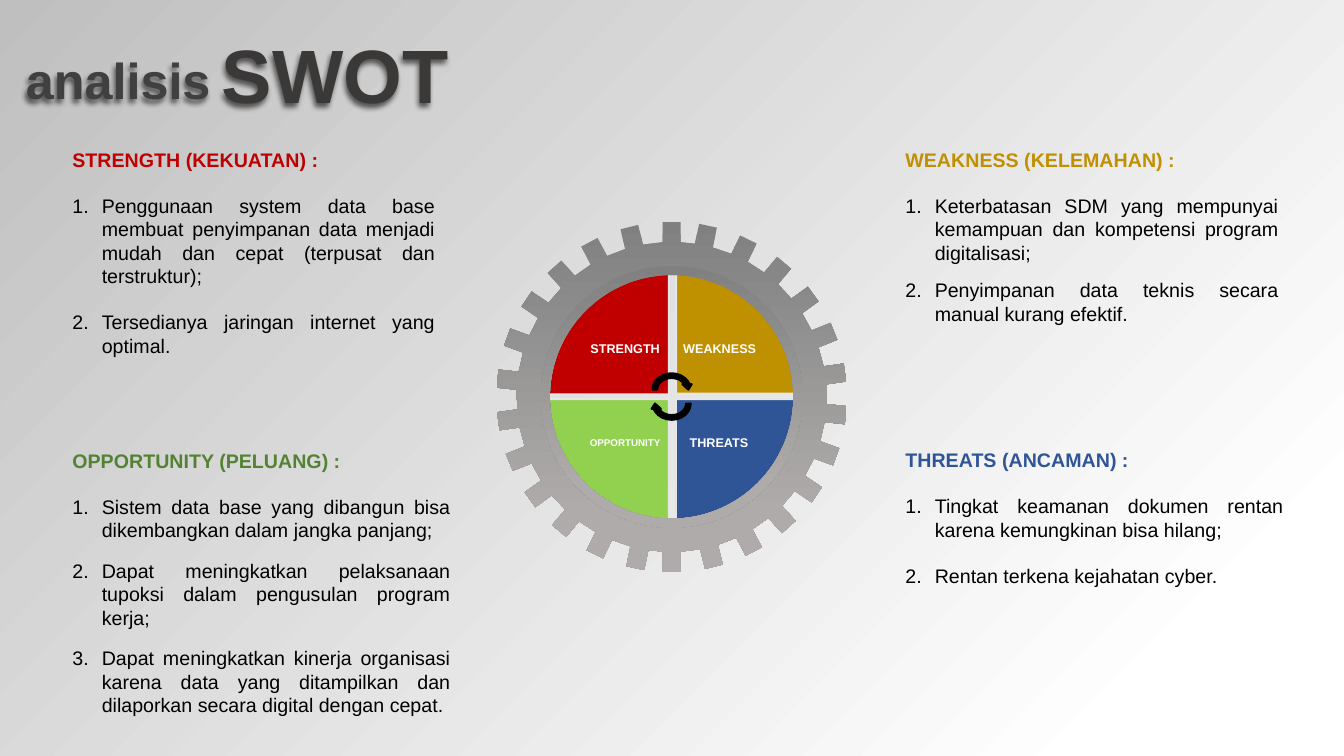
from math import cos, sin, radians

from lxml.etree import SubElement
from pptx import Presentation
from pptx.dml.color import RGBColor
from pptx.enum.shapes import MSO_SHAPE
from pptx.enum.text import MSO_ANCHOR, MSO_AUTO_SIZE, PP_ALIGN
from pptx.oxml.ns import qn
from pptx.util import Pt

RED = RGBColor(0xC0, 0x00, 0x00)
GOLD = RGBColor(0xBF, 0x90, 0x00)
BLUE = RGBColor(0x2F, 0x55, 0x97)
LIME = RGBColor(0x92, 0xD0, 0x50)
GREEN = RGBColor(0x54, 0x82, 0x35)
BLACK = RGBColor(0x00, 0x00, 0x00)
WHITE = RGBColor(0xFF, 0xFF, 0xFF)
CHARCOAL = RGBColor(0x3B, 0x38, 0x38)
DARK_GRAY = RGBColor(0x40, 0x40, 0x40)
MID_GRAY = RGBColor(0x80, 0x80, 0x80)
WARM_GRAY = RGBColor(0xAF, 0xAB, 0xAB)
LIGHT_GRAY = RGBColor(0xBF, 0xBF, 0xBF)
EDGE_GRAY = RGBColor(0xE7, 0xE6, 0xE6)


def set_gradient(fill, start, end, end_position, angle):
    fill.gradient()
    fill.gradient_angle = angle
    first, last = fill.gradient_stops
    first.color.rgb, first.position = start, 0
    last.color.rgb, last.position = end, end_position


def style_paragraph(paragraph, size, color, align, bold=True):
    paragraph.alignment = align
    for run in paragraph.runs:
        run.font.name = "Arial"
        run.font.size = Pt(size)
        run.font.bold = bold
        run.font.color.rgb = color


prs = Presentation()
prs.slide_width, prs.slide_height = Pt(960), Pt(540)
slide = prs.slides.add_slide(prs.slide_layouts.get_by_name("Comparison"))
shapes = slide.shapes
set_gradient(slide.background.fill, LIGHT_GRAY, WHITE, 0.88, 315)

# Title in two sizes, both with a soft shadow
swot = shapes.title
analisis = shapes.add_textbox(0, 0, 0, 0)
for title, text, left, top, height, size, color in [
    (swot, "SWOT", 124.5, 16.5, 72.5, 54, CHARCOAL),
    (analisis, "analisis", -30.5, 31.5, 51, 36, DARK_GRAY),
]:
    title.left, title.top = Pt(left), Pt(top)
    title.width, title.height = Pt(230), Pt(height)
    frame = title.text_frame
    frame.text = text
    frame.word_wrap = True
    frame.auto_size = MSO_AUTO_SIZE.NONE
    frame.vertical_anchor = MSO_ANCHOR.TOP
    style_paragraph(frame.paragraphs[0], size, color, PP_ALIGN.CENTER)
    effects = SubElement(title.element.spPr, qn("a:effectLst"))
    shadow = SubElement(effects, qn("a:outerShdw"), blurRad=str(Pt(4)),
                        dist=str(Pt(3)), dir="7200000")
    shadow_color = SubElement(shadow, qn("a:srgbClr"), val="000000")
    SubElement(shadow_color, qn("a:alpha"), val="60000")

# Four numbered lists: placeholder, left, top, width, height, item gap
# (a no-break space keeps two words on one line where the list needs it)
factors = [
    (1, 44.5, 102, 273.5, 158, 16, "STRENGTH (KEKUATAN) :", RED, [
        "Penggunaan system data base membuat penyimpanan data menjadi "
        "mudah dan cepat (terpusat dan terstruktur);",
        "Tersedianya jaringan internet yang optimal."]),
    (2, 44.5, 317, 284.5, 225, 12, "OPPORTUNITY (PELUANG) :", GREEN, [
        "Sistem data base yang dibangun bisa dikembangkan dalam jangka "
        "panjang;",
        "Dapat meningkatkan pelaksanaan tupoksi dalam pengusulan program "
        "kerja;",
        "Dapat meningkatkan kinerja organisasi karena data yang "
        "ditampilkan dan dilaporkan secara digital dengan cepat."]),
    (3, 639.5, 102, 281, 135, 10, "WEAKNESS (KELEMAHAN) :", GOLD, [
        "Keterbatasan SDM yang mempunyai kemampuan dan kompetensi "
        "program digitalisasi;",
        "Penyimpanan data teknis secara manual kurang efektif."]),
    (4, 639.5, 316.5, 284.5, 107, 16, "THREATS (ANCAMAN) :", BLUE, [
        "Tingkat keamanan dokumen rentan karena kemungkinan bisa hilang;",
        "Rentan terkena kejahatan cyber."]),
]
for index, left, top, width, height, gap, heading, color, items in factors:
    factor = slide.placeholders[index]
    factor.left, factor.top = Pt(left), Pt(top)
    factor.width, factor.height = Pt(width), Pt(height)
    frame = factor.text_frame
    frame.text = "\n".join([heading] + items)
    frame.auto_size = MSO_AUTO_SIZE.NONE
    frame.vertical_anchor = MSO_ANCHOR.TOP
    for number, paragraph in enumerate(frame.paragraphs):
        is_item = number > 0
        style_paragraph(paragraph, 14, BLACK if is_item else color,
                        PP_ALIGN.JUSTIFY, not is_item)
        paragraph.line_spacing = 1.0
        paragraph.space_before = Pt(0)
        paragraph.space_after = Pt(gap if is_item else 16)
        properties = paragraph._p.get_or_add_pPr()
        indent = Pt(21) if is_item else 0
        properties.set("marL", str(indent))
        properties.set("indent", str(-indent))
        if is_item:
            SubElement(properties, qn("a:buFont"), typeface="Arial")
            SubElement(properties, qn("a:buAutoNum"), type="arabicPeriod")
        else:
            SubElement(properties, qn("a:buNone"))

# Wheel of four wedges with their labels
WEDGE, LABEL = 88.5, 63
wedges = [
    ("STRENGTH", RED, 0, 389.25, 193.25, 415, 218, 9),
    ("WEAKNESS", GOLD, 90, 483, 192.75, 482.5, 218, 9),
    ("THREATS", BLUE, 180, 482.75, 285, 482, 285, 9),
    ("OPPORTUNITY", LIME, 270, 389.25, 285, 415, 285, 7),
]
for name, color, rotation, left, top, label_left, label_top, size in wedges:
    wedge = shapes.add_shape(MSO_SHAPE.PIE_WEDGE, Pt(left), Pt(top),
                             Pt(WEDGE), Pt(WEDGE))
    wedge.rotation = rotation
    wedge.shadow.inherit = False
    wedge.fill.solid()
    wedge.fill.fore_color.rgb = color
    wedge.line.color.rgb = EDGE_GRAY
    wedge.line.width = Pt(1.5)
    label = shapes.add_textbox(Pt(label_left), Pt(label_top),
                               Pt(LABEL), Pt(LABEL))
    frame = label.text_frame
    frame.text = name
    frame.word_wrap = True
    frame.vertical_anchor = MSO_ANCHOR.MIDDLE
    frame.margin_left = frame.margin_right = Pt(size / 2)
    frame.margin_top = frame.margin_bottom = Pt(size / 2)
    frame.paragraphs[0].line_spacing = 0.9
    style_paragraph(frame.paragraphs[0], size, WHITE, PP_ALIGN.CENTER)

# Cycle arrows at the hub
for top, rotation in [(265, 0), (275, 180)]:
    cycle = shapes.add_shape(MSO_SHAPE.CIRCULAR_ARROW, Pt(464.5), Pt(top),
                             Pt(30.5), Pt(26.5))
    cycle.rotation = rotation
    cycle.shadow.inherit = False
    cycle.fill.solid()
    cycle.fill.fore_color.rgb = BLACK
    cycle.line.color.rgb = BLACK
    cycle.line.width = Pt(1.5)

# Gear: two equal halves of 13 teeth, around a hole that the rim covers
CENTER_X, CENTER_Y = 479.75, 283.5
TOOTH_HALF, ROOT, TIP, HOLE = 6.5, 110.5, 125, 90
RIM, RIM_WIDTH = 93.5, 6.5
tooth = [(-TOOTH_HALF, ROOT), (-TOOTH_HALF, TIP), (TOOTH_HALF, TIP),
         (TOOTH_HALF, ROOT)]
half_turns = [0] + [12 + 14 * number for number in range(12)]
hole = [(0, HOLE)]
contours = []
for turns, corners in [
    (half_turns + [180 + turn for turn in half_turns], tooth),
    (range(0, 360, 10), hole),
]:
    contours.append([
        (Pt(CENTER_X + across * cos(radians(turn)) + out * sin(radians(turn))),
         Pt(CENTER_Y + across * sin(radians(turn)) - out * cos(radians(turn))))
        for turn in turns for across, out in corners])
builder = shapes.build_freeform(*contours[0][0])
builder.add_line_segments(contours[0][1:])
builder.move_to(*contours[1][0])
builder.add_line_segments(contours[1][1:])
gear = builder.convert_to_shape()

rim = shapes.add_shape(MSO_SHAPE.DONUT, Pt(CENTER_X - RIM), Pt(CENTER_Y - RIM),
                       Pt(2 * RIM), Pt(2 * RIM))
rim.adjustments[0] = RIM_WIDTH / (2 * RIM)
for ring in (gear, rim):
    ring.shadow.inherit = False
    ring.line.fill.background()
    set_gradient(ring.fill, MID_GRAY, WARM_GRAY, 0.83, 270)

prs.save("out.pptx")
